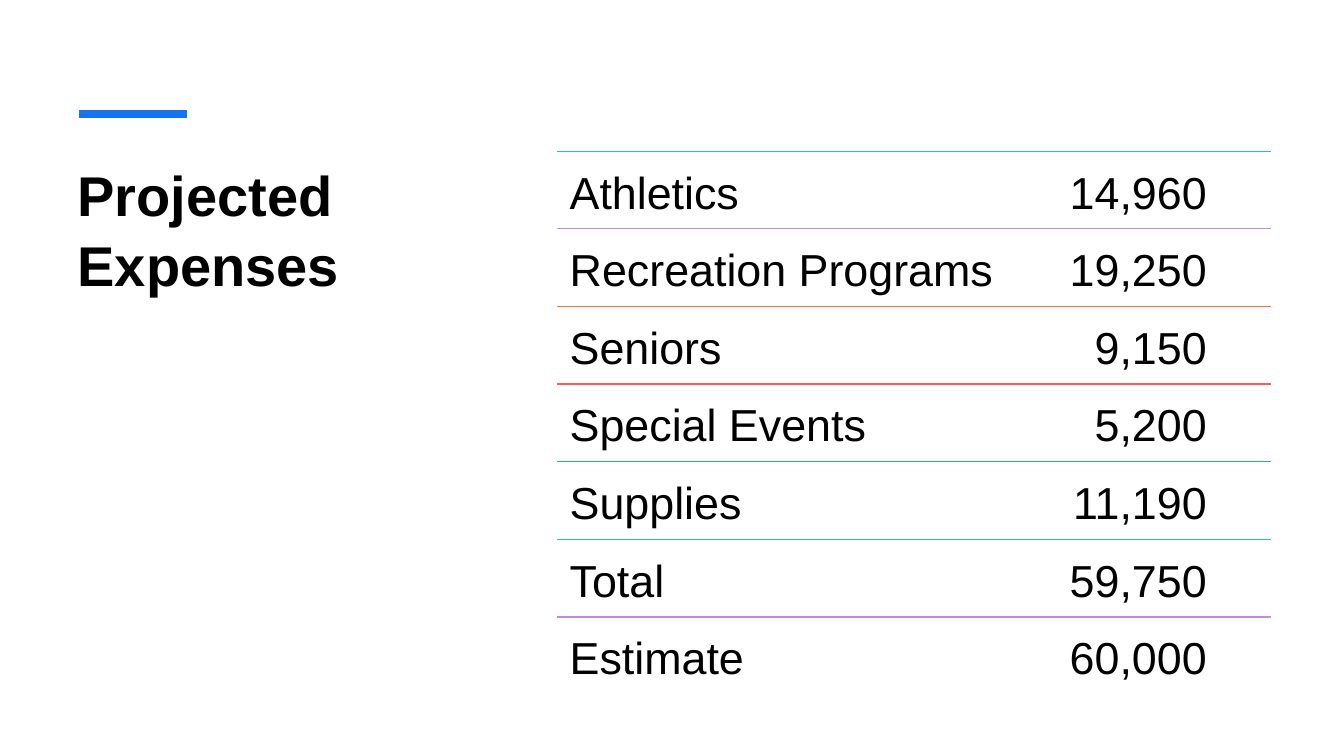
from lxml import etree
from pptx import Presentation
from pptx.dml.color import RGBColor
from pptx.enum.shapes import MSO_CONNECTOR
from pptx.enum.text import MSO_ANCHOR
from pptx.oxml.ns import qn
from pptx.util import Pt

PX = 9144  # EMU: 100 px to the inch
FONT = "Arial"

BLACK = RGBColor(0x00, 0x00, 0x00)
BLUE = RGBColor(0x19, 0x73, 0xEB)
TEAL = RGBColor(0x25, 0xC8, 0xA2)
PURPLE = RGBColor(0xBF, 0x8E, 0xD1)
ORANGE = RGBColor(0xFE, 0x73, 0x3C)
RED = RGBColor(0xFE, 0x5A, 0x5A)
GREEN = RGBColor(0x1A, 0xC1, 0x6E)

EXPENSES = [
    ("Athletics", "14,960", TEAL),
    ("Recreation Programs", "19,250", PURPLE),
    ("Seniors", "9,150", ORANGE),
    ("Special Events", "5,200", RED),
    ("Supplies", "11,190", GREEN),
    ("Total", "59,750", TEAL),
    ("Estimate", "60,000", PURPLE),
]
LIST_LEFT, LIST_TOP, LIST_WIDTH, ROW_HEIGHT = 552, 150, 709, 77
AMOUNT_TAB = 632


def add_rule(s, x, y, width, color, weight):
    line = s.shapes.add_connector(
        MSO_CONNECTOR.STRAIGHT, x * PX, y * PX, (x + width) * PX, y * PX)
    line.line.color.rgb = color
    line.line.width = Pt(weight)
    etree.SubElement(line._element.spPr, qn("a:effectLst"))


def add_text(s, text, box, inset, size, bold=False):
    """Add a wrapped, top-anchored text box and return its paragraph."""
    tf = s.shapes.add_textbox(*(v * PX for v in box)).text_frame
    frame_format = {"word_wrap": True, "vertical_anchor": MSO_ANCHOR.TOP}
    for side in ("left", "top", "right", "bottom"):
        frame_format[f"margin_{side}"] = inset * PX
    for name, value in frame_format.items():
        setattr(tf, name, value)
    p = tf.paragraphs[0]
    r = p.add_run()
    r.text = text
    for name, value in {"name": FONT, "size": Pt(size), "bold": bold}.items():
        setattr(r.font, name, value)
    r.font.color.rgb = BLACK
    return p


def add_right_tab(p, position):
    tabs = etree.SubElement(p._p.get_or_add_pPr(), qn("a:tabLst"))
    etree.SubElement(tabs, qn("a:tab"), pos=str(position * PX), algn="r")


def add_expense(s, y, label, amount, color):
    add_rule(s, LIST_LEFT, y, LIST_WIDTH, color, 1)
    p = add_text(s, f"{label}\t{amount}",
                 (LIST_LEFT, y, LIST_WIDTH, ROW_HEIGHT), 13, 32)
    add_right_tab(p, AMOUNT_TAB)


def main():
    prs = Presentation()
    prs.slide_width, prs.slide_height = 1333 * PX, 750 * PX
    s = prs.slides.add_slide(prs.slide_layouts[6])

    title = add_text(s, "Projected Expenses", (70, 150, 402, 429), 7, 40, True)
    title.line_spacing = 1.04
    add_rule(s, 78, 113, 107, BLUE, 6)
    for i, expense in enumerate(EXPENSES):
        add_expense(s, LIST_TOP + i * ROW_HEIGHT, *expense)

    prs.save("out.pptx")


if __name__ == "__main__":
    main()
